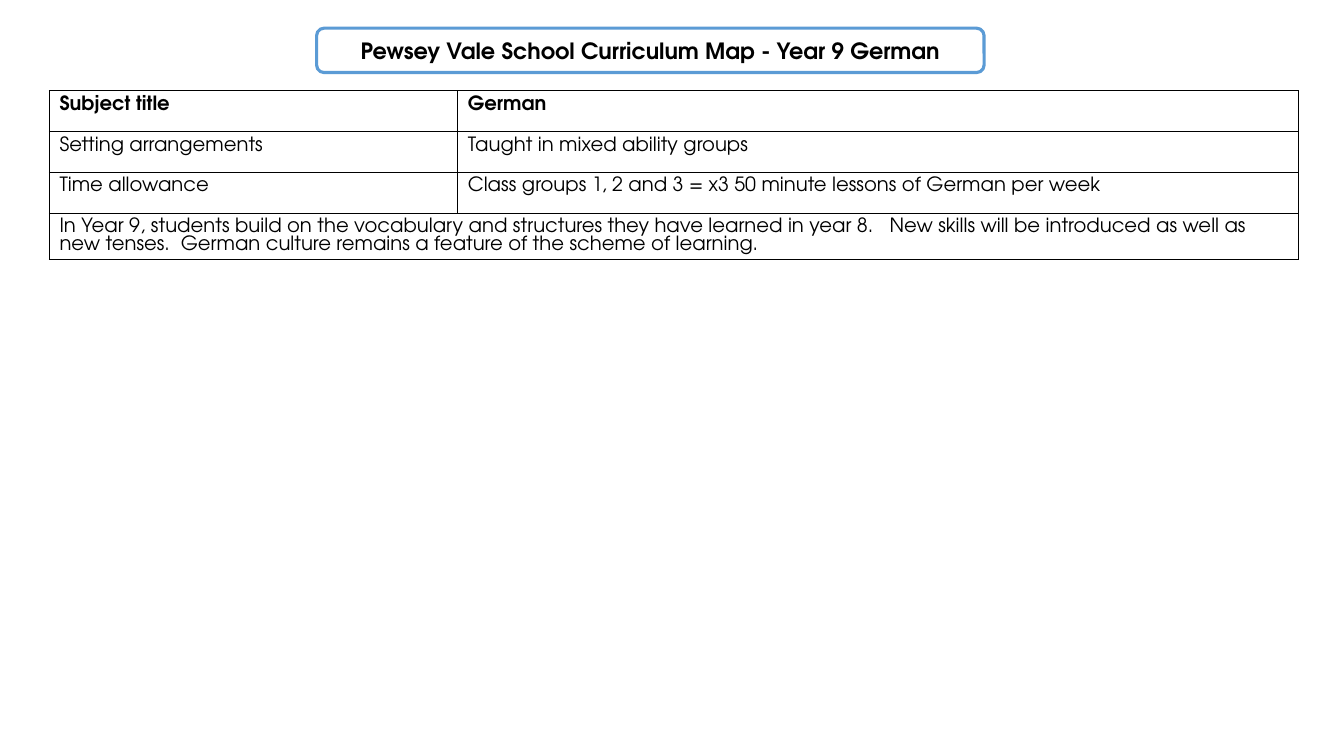
from dataclasses import dataclass

from lxml import etree
from pptx import Presentation
from pptx.dml.color import RGBColor
from pptx.enum.shapes import MSO_SHAPE
from pptx.enum.text import MSO_ANCHOR, PP_ALIGN
from pptx.oxml.ns import qn
from pptx.slide import Slide
from pptx.table import _Cell
from pptx.text.text import TextFrame
from pptx.util import Inches, Pt

ROUNDED = MSO_SHAPE.ROUNDED_RECTANGLE
MIDDLE = MSO_ANCHOR.MIDDLE
CENTER = PP_ALIGN.CENTER

BLACK = RGBColor(0x00, 0x00, 0x00)
WHITE = RGBColor(0xFF, 0xFF, 0xFF)
BLUE = RGBColor(0x5B, 0x9B, 0xD5)
FONT = "TeX Gyre Adventor"
TITLE = "Pewsey Vale School Curriculum Map - Year 9 German"
COLUMN_WIDTHS = (4.05, 8.34)
ROW_HEIGHT = 0.405


@dataclass
class CurriculumRow:
    cells: tuple[str, ...]
    bold: bool = False


ROWS = (
    CurriculumRow(("Subject title", "German"), bold=True),
    CurriculumRow(("Setting arrangements", "Taught in mixed ability groups")),
    CurriculumRow((
        "Time allowance",
        "Class groups 1, 2 and 3 = x3 50 minute lessons of German per week",
    )),
    CurriculumRow((
        "In Year 9, students build on the vocabulary and structures they have "
        "learned in year 8.   New skills will be introduced as well as new "
        "tenses.  German culture remains a feature of the scheme of learning.",
    )),
)


def write_text(tf: TextFrame, text: str, size: float, bold: bool) -> None:
    tf.text = text
    font = tf.paragraphs[0].runs[0].font
    font.name = FONT
    font.size = Pt(size)
    font.bold = bold
    font.color.rgb = BLACK


def style_cell(cell: _Cell) -> None:
    cell.fill.background()
    tc_pr = cell._tc.get_or_add_tcPr()
    for position, side in enumerate(("lnL", "lnR", "lnT", "lnB")):
        ln = etree.Element(qn(f"a:{side}"), w=str(Pt(1)))
        fill = etree.SubElement(ln, qn("a:solidFill"))
        etree.SubElement(fill, qn("a:srgbClr"), val=str(BLACK))
        tc_pr.insert(position, ln)
    cell.fill.solid()
    cell.fill.fore_color.rgb = WHITE


def add_title(slide: Slide) -> None:
    sp = slide.shapes.add_shape(
        ROUNDED, Inches(3.14), Inches(0.28), Inches(6.62), Inches(0.44)
    )
    sp.shadow.inherit = False
    sp.fill.solid()
    sp.fill.fore_color.rgb = WHITE
    sp.line.color.rgb = BLUE
    sp.line.width = Pt(2.25)
    tf = sp.text_frame
    tf.word_wrap = True
    tf.vertical_anchor = MIDDLE
    write_text(tf, TITLE, 16, True)
    tf.paragraphs[0].alignment = CENTER


def add_curriculum_table(slide: Slide) -> None:
    table = slide.shapes.add_table(
        len(ROWS), len(COLUMN_WIDTHS), Inches(0.49), Inches(0.9),
        Inches(sum(COLUMN_WIDTHS)), Inches(ROW_HEIGHT * len(ROWS)),
    ).table
    table.first_row = False
    table.horz_banding = False
    for column, width in zip(table.columns, COLUMN_WIDTHS):
        column.width = Inches(width)
    for index, row in enumerate(ROWS):
        table.rows[index].height = Inches(ROW_HEIGHT)
        for column in range(len(COLUMN_WIDTHS)):
            style_cell(table.cell(index, column))
        if len(row.cells) == 1:
            table.cell(index, 0).merge(table.cell(index, len(COLUMN_WIDTHS) - 1))
        for column, text in enumerate(row.cells):
            write_text(table.cell(index, column).text_frame, text, 14, row.bold)


def main() -> None:
    prs = Presentation()
    prs.slide_width = Inches(13.33)
    prs.slide_height = Inches(7.5)
    slide = prs.slides.add_slide(prs.slide_layouts[6])
    add_title(slide)
    add_curriculum_table(slide)
    prs.save("out.pptx")


if __name__ == "__main__":
    main()
